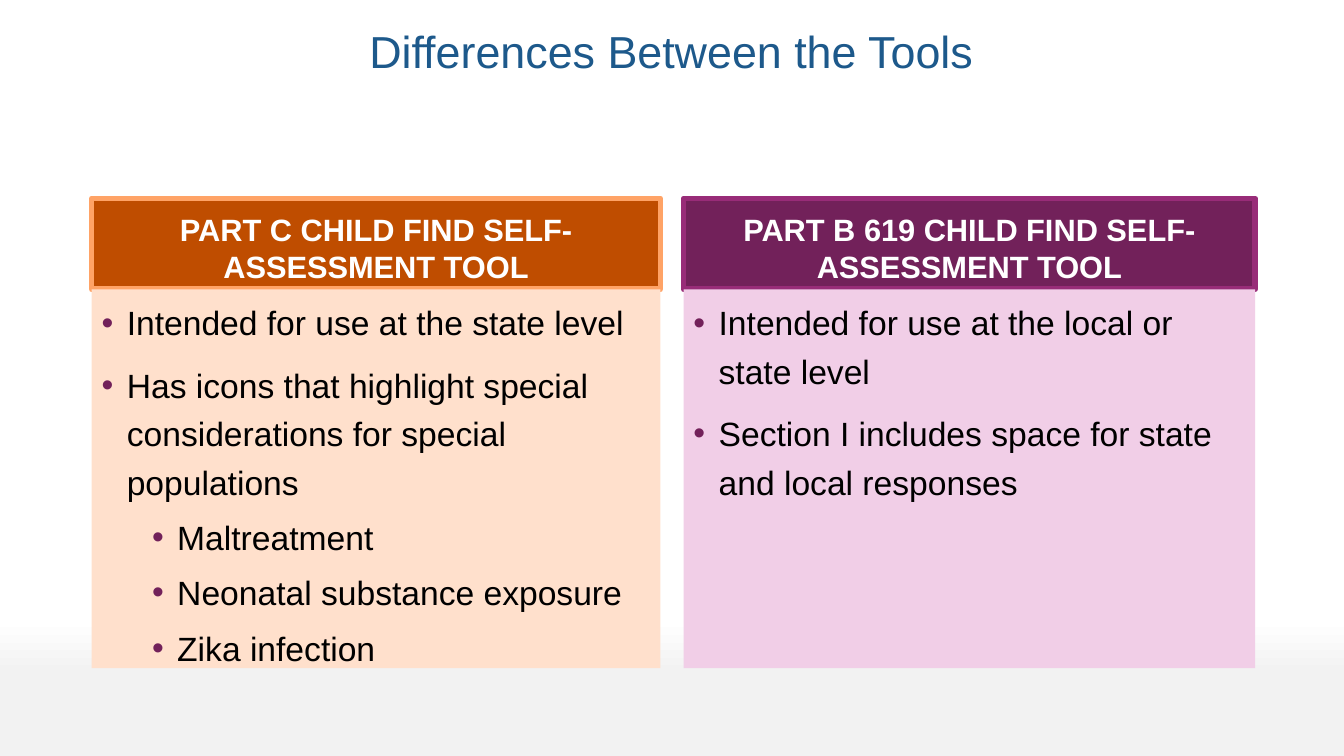
from lxml.etree import SubElement
from pptx import Presentation
from pptx.dml.color import RGBColor
from pptx.enum.shapes import MSO_SHAPE
from pptx.enum.text import MSO_ANCHOR, PP_ALIGN
from pptx.oxml.ns import qn
from pptx.util import Inches, Pt

WHITE = RGBColor(0xFF, 0xFF, 0xFF)
BLACK = RGBColor(0, 0, 0)
GRAY = RGBColor(0xF2, 0xF2, 0xF2)
BLUE = RGBColor(0x1D, 0x59, 0x8B)
ORANGE = RGBColor(0xBF, 0x4D, 0x00)
LIGHT_ORANGE = RGBColor(0xFF, 0xA3, 0x66)
PEACH = RGBColor(0xFF, 0xE0, 0xCC)
PLUM = RGBColor(0x72, 0x21, 0x5A)
LIGHT_PLUM = RGBColor(0x98, 0x2C, 0x78)
PINK = RGBColor(0xF1, 0xCE, 0xE7)

TITLE = "Differences Between the Tools"
# Each bullet is (level, text)
TOOLS = [
    {
        "heading": "PART C CHILD FIND SELF-ASSESSMENT TOOL",
        "left": 0.91, "width": 5.64,
        "fill": ORANGE, "border": LIGHT_ORANGE, "panel": PEACH,
        "bullets": [
            (0, "Intended for use at the state level"),
            (0, "Has icons that highlight special considerations for special populations"),
            (1, "Maltreatment"),
            (1, "Neonatal substance exposure"),
            (1, "Zika infection"),
        ],
    },
    {
        "heading": "PART B 619 CHILD FIND SELF-ASSESSMENT TOOL",
        "left": 6.78, "width": 5.67,
        "fill": PLUM, "border": LIGHT_PLUM, "panel": PINK,
        "bullets": [
            (0, "Intended for use at the local or state level"),
            (0, "Section I includes space for state and local responses"),
        ],
    },
]
HEADING_TOP, HEADING_HEIGHT, PANEL_HEIGHT = 1.97, 0.9, 3.76
INDENT, LEVEL_STEP = 0.25, 0.5
SPACE_BEFORE = (10, 5)

TITLE_FONT = {"name": "Arial", "size": Pt(32)}
HEADING_FONT = {"name": "Arial", "size": Pt(22), "bold": True}
BULLET_FONT = {"name": "Arial", "size": Pt(24)}


def write(paragraph, text, font, color, **layout):
    paragraph.text = text
    for name, value in layout.items():
        setattr(paragraph, name, value)
    for name, value in font.items():
        setattr(paragraph.font, name, value)
    paragraph.font.color.rgb = color


def add_bullet(paragraph, level):
    properties = paragraph._p.get_or_add_pPr()
    properties.set("marL", str(Inches(INDENT + level * LEVEL_STEP)))
    properties.set("indent", str(-Inches(INDENT)))
    color = SubElement(properties, qn("a:buClr"))
    SubElement(color, qn("a:srgbClr"), val=str(PLUM))
    SubElement(properties, qn("a:buFont"), typeface="Arial")
    SubElement(properties, qn("a:buChar"), char="•")


def add_box(slide, left, top, width, height, fill, anchor):
    shape = slide.shapes.add_shape(
        MSO_SHAPE.RECTANGLE, *map(Inches, (left, top, width, height)))
    shape.shadow.inherit = False
    shape.fill.solid()
    shape.fill.fore_color.rgb = fill
    shape.line.fill.background()
    shape.text_frame.word_wrap = True
    shape.text_frame.vertical_anchor = anchor
    return shape


def add_heading(slide, tool):
    shape = add_box(slide, tool["left"], HEADING_TOP, tool["width"],
                    HEADING_HEIGHT, tool["fill"], MSO_ANCHOR.BOTTOM)
    shape.line.color.rgb = tool["border"]
    shape.line.width = Pt(4)
    SubElement(shape.line._ln, qn("a:round"))
    write(shape.text_frame.paragraphs[0], tool["heading"], HEADING_FONT, WHITE,
          alignment=PP_ALIGN.CENTER)


def add_panel(slide, tool):
    shape = add_box(slide, tool["left"], HEADING_TOP + HEADING_HEIGHT,
                    tool["width"], PANEL_HEIGHT, tool["panel"], MSO_ANCHOR.TOP)
    frame = shape.text_frame
    for index, (level, text) in enumerate(tool["bullets"]):
        paragraph = frame.add_paragraph() if index else frame.paragraphs[0]
        add_bullet(paragraph, level)
        write(paragraph, text, BULLET_FONT, BLACK, level=level,
              alignment=PP_ALIGN.LEFT, line_spacing=1.2,
              space_before=Pt(SPACE_BEFORE[level] if index else 0))


def main():
    presentation = Presentation()
    presentation.slide_width = Inches(13.33)
    presentation.slide_height = Inches(7.5)
    slide = presentation.slides.add_slide(presentation.slide_layouts[6])

    background = slide.background.fill
    background.gradient()
    background.gradient_angle = 270
    for stop, position, color in zip(
            background.gradient_stops, (0.82, 0.89), (WHITE, GRAY)):
        stop.position = position
        stop.color.rgb = color

    title = slide.shapes.add_textbox(*map(Inches, (0.64, 0.25, 12.04, 1)))
    title.text_frame.word_wrap = True
    write(title.text_frame.paragraphs[0], TITLE, TITLE_FONT, BLUE,
          alignment=PP_ALIGN.CENTER, line_spacing=0.9)

    for tool in TOOLS:
        add_heading(slide, tool)
        add_panel(slide, tool)
    presentation.save("out.pptx")


if __name__ == "__main__":
    main()
